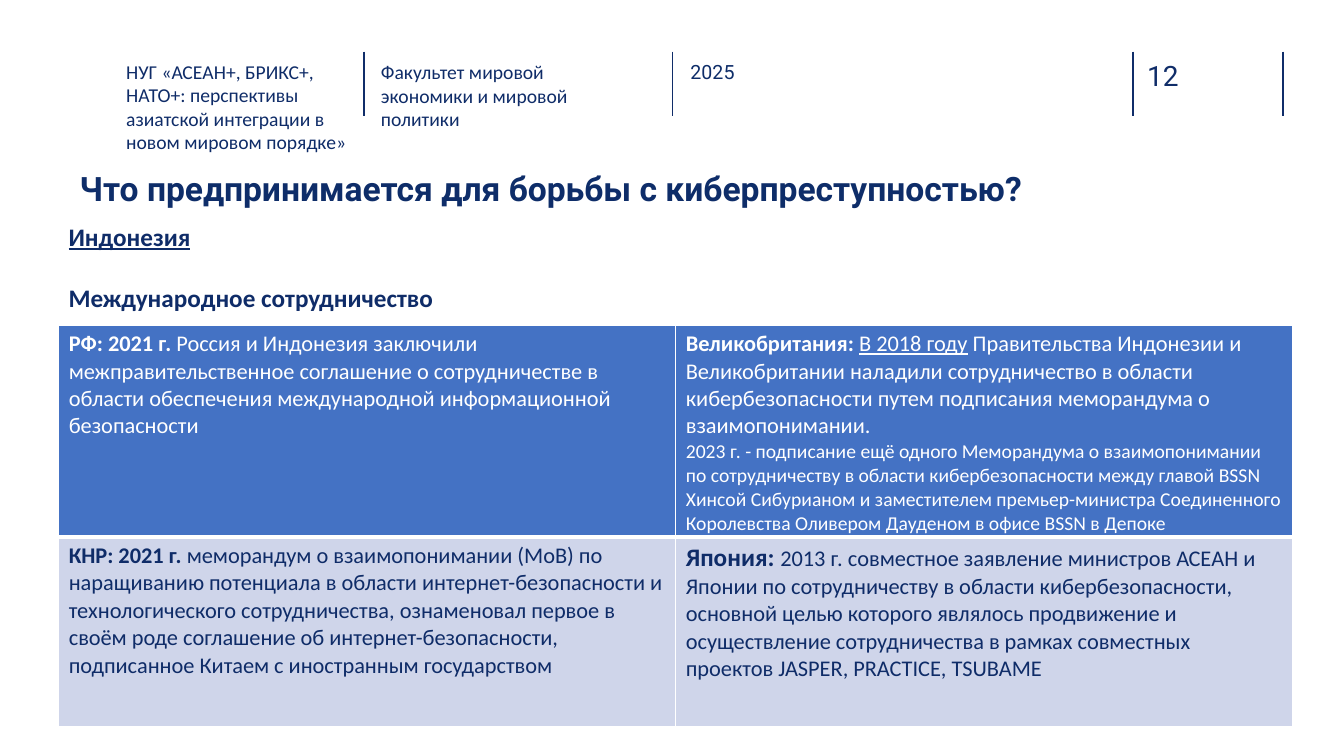
from dataclasses import dataclass

from lxml.etree import SubElement
from pptx import Presentation
from pptx.dml.color import RGBColor as Color
from pptx.enum.shapes import MSO_CONNECTOR as Connector
from pptx.oxml.ns import qn
from pptx.util import Cm, Pt


@dataclass(frozen=True)
class Theme:
    navy: str = "0F2C68"
    rule: str = "102D69"
    title_navy: str = "0E2D69"
    blue: str = "4472C4"
    pale: str = "CFD5EA"
    white: str = "FFFFFF"
    body_font: str = "Calibri"
    title_font: str = "Roboto"
    small: int = 14
    body: int = 16
    heading: int = 18
    number: int = 20
    title: int = 24


THEME = Theme()

CELLS = [
    [
        [[("РФ: 2021 г. ", "b", THEME.body),
          ("Россия и Индонезия заключили межправительственное соглашение о сотрудничестве "
           "в области обеспечения международной информационной безопасности", "", THEME.body)]],
        [[("Великобритания: ", "b", THEME.body),
          ("В 2018 году", "u", THEME.body),
          (" Правительства Индонезии и Великобритании наладили сотрудничество в области "
           "кибербезопасности путем подписания меморандума о взаимопонимании.", "", THEME.body)],
         [("2023 г. - подписание ещё одного Меморандума о взаимопонимании по сотрудничеству "
           "в области кибербезопасности между главой BSSN Хинсой Сибурианом и заместителем "
           "премьер-министра Соединенного Королевства Оливером Дауденом в офисе BSSN в Депоке",
           "", THEME.small)]],
    ],
    [
        [[("КНР: 2021 г. ", "b", THEME.body),
          ("меморандум о взаимопонимании (МоВ) по наращиванию потенциала в области "
           "интернет-безопасности и технологического сотрудничества, ознаменовал первое "
           "в своём роде соглашение об интернет-безопасности, подписанное Китаем "
           "с иностранным государством", "", THEME.body)]],
        [[("Япония: ", "b", THEME.heading),
          ("2013 г. совместное заявление министров АСЕАН и Японии по сотрудничеству "
           "в области кибербезопасности, основной целью которого являлось продвижение "
           "и осуществление сотрудничества в рамках совместных проектов JASPER, PRACTICE, "
           "TSUBAME", "", THEME.body)]],
    ],
]


def fill_text(frame, paragraphs, color, font=THEME.body_font, gap=0):
    for index, spans in enumerate(paragraphs):
        para = frame.add_paragraph() if index else frame.paragraphs[0]
        if index:
            para.space_before = Pt(gap)
        for text, style, size in spans:
            span = para.add_run()
            span.text = text
            span.font.name = font
            span.font.size = Pt(size)
            span.font.bold = "b" in style
            span.font.underline = "u" in style
            span.font.color.rgb = Color.from_string(color)


def add_text(page, place, paragraphs, color=THEME.navy, font=THEME.body_font,
             inset=(0, 0), gap=0):
    box = page.shapes.add_textbox(*map(Cm, place))
    frame = box.text_frame
    frame.word_wrap = True
    frame.margin_left = frame.margin_right = Cm(inset[0])
    frame.margin_top = frame.margin_bottom = Cm(inset[1])
    fill_text(frame, paragraphs, color, font, gap)


def add_header_rule(page, left):
    rule = page.shapes.add_connector(Connector.STRAIGHT, Cm(left), Cm(1.3), Cm(left), Cm(2.92))
    rule.line.color.rgb = Color.from_string(THEME.rule)
    rule.line.width = Pt(1)
    SubElement(rule._element.spPr, qn("a:effectLst"))


def add_border(cell, side, points):
    properties = cell._tc.get_or_add_tcPr()
    line = SubElement(properties, qn(f"a:ln{side}"), w=str(Pt(points)))
    solid = SubElement(line, qn("a:solidFill"))
    SubElement(solid, qn("a:srgbClr"), val=THEME.white)


def add_cooperation_table(page):
    widths, heights = (15.55, 15.55), (5.33, 4.78)
    table = page.shapes.add_table(
        2, 2, Cm(1.48), Cm(8.2), Cm(sum(widths)), Cm(sum(heights))).table
    for column, width in zip(table.columns, widths):
        column.width = Cm(width)
    row_looks = [(THEME.blue, THEME.white, 1, 3), (THEME.pale, THEME.navy, 3, 1)]
    for row, (fill, color, top, bottom) in enumerate(row_looks):
        table.rows[row].height = Cm(heights[row])
        for column, paragraphs in enumerate(CELLS[row]):
            cell = table.cell(row, column)
            for side, points in zip("LRTB", (1, 1, top, bottom)):
                add_border(cell, side, points)
            cell.fill.solid()
            cell.fill.fore_color.rgb = Color.from_string(fill)
            fill_text(cell.text_frame, paragraphs, color)


def main():
    deck = Presentation()
    deck.slide_width, deck.slide_height = Cm(33.87), Cm(19.05)
    page = deck.slides.add_slide(deck.slide_layouts[6])

    for left in (9.17, 16.94, 28.55, 32.33):
        add_header_rule(page, left)
    add_text(page, (28.91, 1.47, 1.85, 0.86), [[("12", "", THEME.number)]],
             THEME.rule, THEME.title_font)
    add_text(page, (3.18, 1.5, 6.05, 1.24),
             [[("НУГ «АСЕАН+, БРИКС+, НАТО+: перспективы азиатской интеграции "
                "в новом мировом порядке»", "", THEME.small)]])
    add_text(page, (9.6, 1.52, 5.74, 1.14),
             [[("Факультет мировой экономики и мировой политики", "", THEME.small)]])
    add_text(page, (17.4, 1.52, 5.74, 1.14), [[("2025", "", THEME.small)]],
             THEME.title_navy, THEME.title_font)
    add_text(page, (2.01, 4.22, 29.62, 1.78),
             [[("Что предпринимается для борьбы с киберпреступностью?", "b", THEME.title)]],
             THEME.title_navy, THEME.title_font)
    add_text(page, (1.48, 5.44, 26.31, 3.45),
             [[("Индонезия", "bu", THEME.heading)],
              [("Международное сотрудничество", "b", THEME.heading)]],
             inset=(0.25, 0.13), gap=22)
    add_cooperation_table(page)

    deck.save("out.pptx")


if __name__ == "__main__":
    main()
